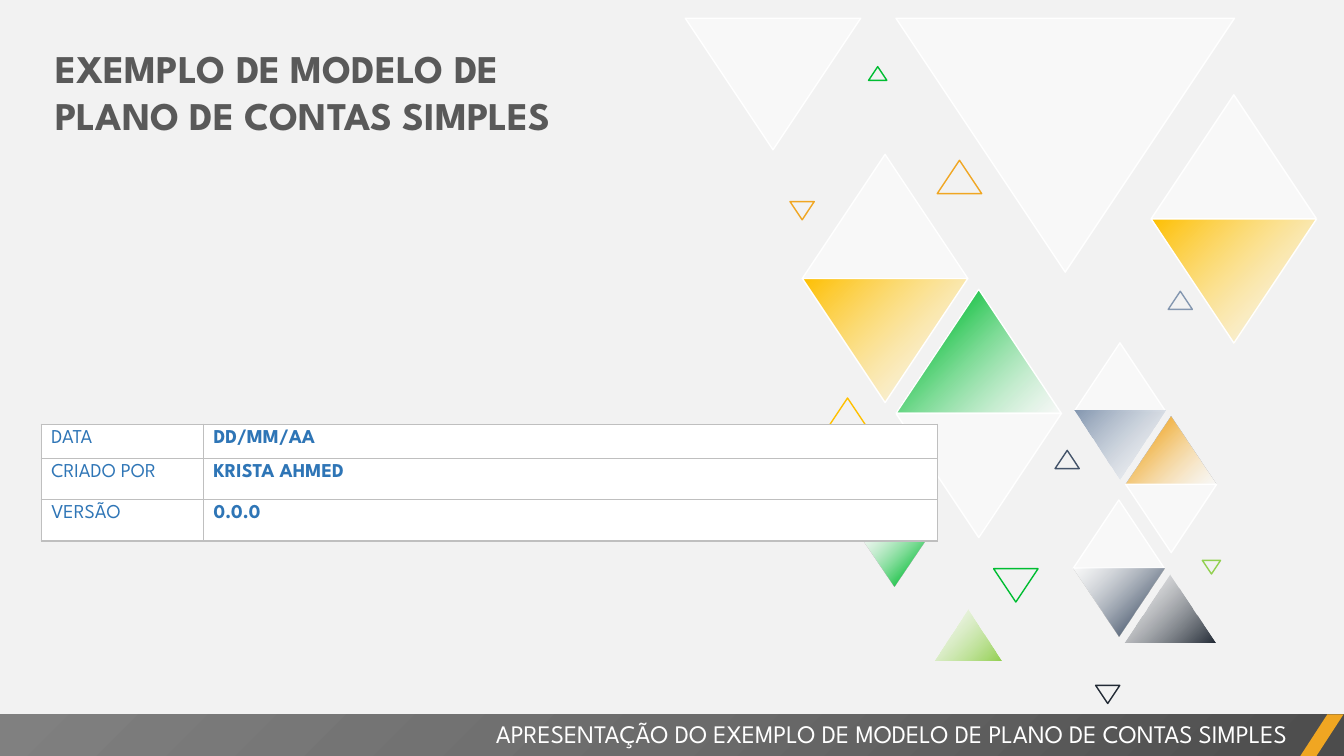
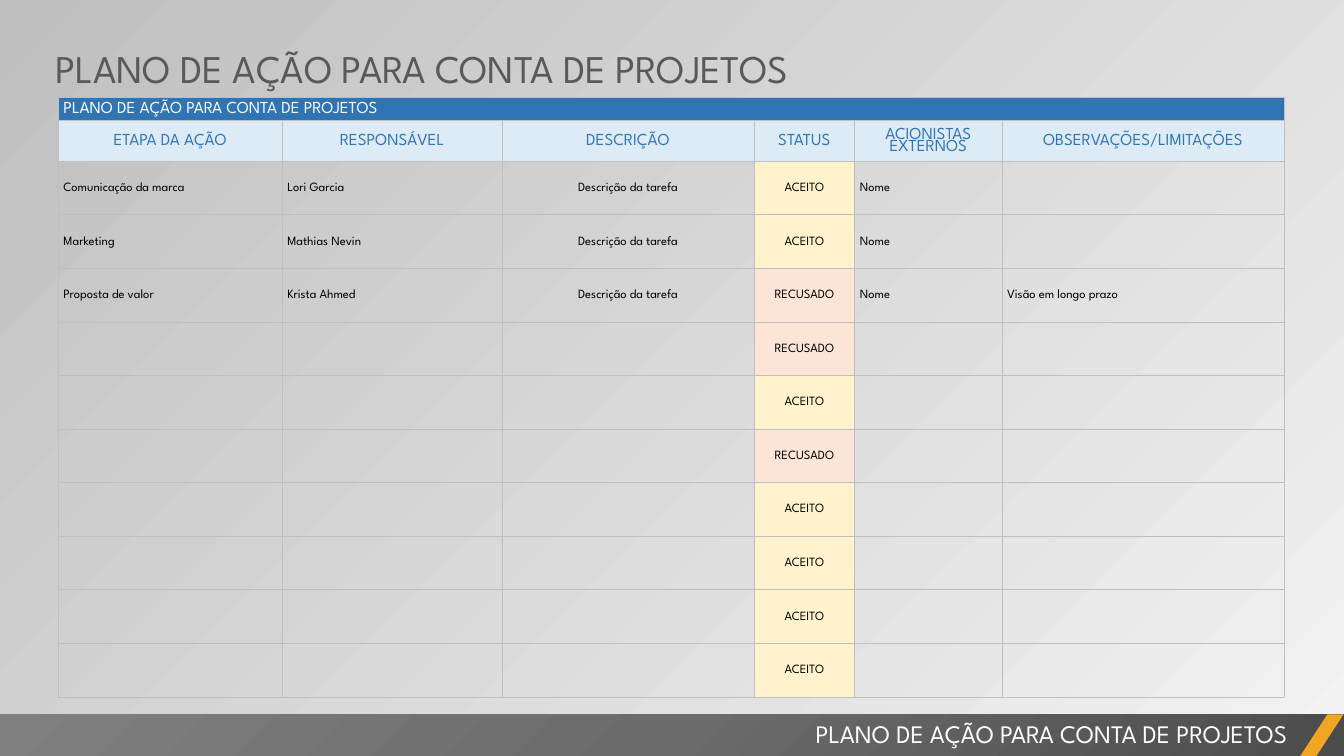
"""Build a two-slide account plan deck: a cover and an action plan."""
from lxml import etree
from pptx import Presentation
from pptx import util as u
from pptx.dml.color import RGBColor
from pptx.enum import shapes, text
from pptx.oxml import ns

HUES = {
    "white": "FFFFFF", "black": "000000", "pale": "F2F2F2", "edge": "BFBFBF",
    "title": "595959", "dark": "4C4C4C", "mid": "6B6B6B", "light": "808080",
    "blue": "2E75B6", "banner": "2F75B5", "sky": "DDEBF7",
    "cream": "FFF2CC", "blush": "FCE4D6",
    "gold": "FFC000", "amber": "F0A622", "green": "00BD32", "lime": "92D050",
    "steel": "8497B0", "slate": "44546A", "ink": "222A35",
}
LEFT, MID, RIGHT = text.PP_ALIGN.LEFT, text.PP_ALIGN.CENTER, text.PP_ALIGN.RIGHT
UP, DOWN = 0, 180
BIG, FAIR, SMALL = 4.17, 2.29, 1.7
WIDE, SLIM, TINY = 1.12, 0.61, 0.46


def place(*sizes):
    return [u.Cm(size) for size in sizes]


def rgb(hue):
    return RGBColor.from_string(HUES[hue])


def sub(parent, tag, **attrs):
    return etree.SubElement(parent, ns.qn(tag), {k: str(v) for k, v in attrs.items()})


def paint(fill, hue):
    fill.solid()
    fill.fore_color.rgb = rgb(hue)


def blend(fill, root, stops, radial=False):
    fill.solid()
    old = root.find(".//" + ns.qn("a:solidFill"))
    grad = etree.Element(ns.qn("a:gradFill"), rotWithShape="1")
    chain = sub(grad, "a:gsLst")
    for pos, hue, alpha in stops:
        stop = sub(chain, "a:gs", pos=pos * 1000)
        tint = sub(stop, "a:srgbClr", val=HUES[hue])
        if alpha < 100:
            sub(tint, "a:alpha", val=alpha * 1000)
    if radial:
        way = sub(grad, "a:path", path="circle")
        sub(way, "a:fillToRect", l=100000, t=100000)
    else:
        sub(grad, "a:lin", ang=225 * 60000, scaled=0)
    old.getparent().replace(old, grad)


class Deck:
    font = "League Spartan"

    def __init__(self):
        self.show = Presentation()
        self.show.slide_width, self.show.slide_height = place(33.87, 19.05)
        self.slide = None

    def start(self):
        self.slide = self.show.slides.add_slide(self.show.slide_layouts[6])

    def put(self, frame, words, size, hue, bold=False, align=LEFT):
        para = frame.paragraphs[0]
        para.alignment = align
        run = para.add_run()
        run.text = words
        run.font.name, run.font.size, run.font.bold = self.font, u.Pt(size), bold
        run.font.color.rgb = rgb(hue)
        return para

    def label(self, box, words, size, hue, **style):
        frame = self.slide.shapes.add_textbox(*place(*box)).text_frame
        frame.word_wrap = True
        frame.auto_size = text.MSO_AUTO_SIZE.SHAPE_TO_FIT_TEXT
        self.put(frame, words, size, hue, **style)

    def title(self, words, width, height, bold=False):
        self.label((1.14, 0.99, width, height), words, 28, "title", bold=bold)

    def shape(self, kind, box, home=None):
        form = (home or self.slide).shapes.add_shape(kind, *place(*box))
        form.shadow.inherit = False
        form.line.fill.background()
        return form

    def footer(self, words, width):
        band = self.shape(shapes.MSO_SHAPE.RECTANGLE, (0, 18, 33.87, 1.05))
        blend(band.fill, band._element.spPr,
              [(0, "dark", 100), (50, "mid", 100), (100, "light", 100)], True)
        slash = self.shape(shapes.MSO_SHAPE.PARALLELOGRAM, (32.77, 18, 1.09, 1.05))
        slash.adjustments[0] = 0.65
        paint(slash.fill, "amber")
        self.label((32.69 - width, 17.98, width, 1.02), words, 18, "white", align=RIGHT)

    def wedge(self, home, left, top, width, turn, hue, mode):
        form = self.shape(shapes.MSO_SHAPE.ISOSCELES_TRIANGLE,
                          (left, top, width, width * 0.75), home)
        form.rotation = turn
        props = form._element.spPr
        if mode == "open":
            form.fill.background()
        elif mode == "glass":
            paint(form.fill, hue)
            sub(props.find(".//" + ns.qn("a:srgbClr")), "a:alpha", val=50000)
        elif mode == "from":
            blend(form.fill, props, [(0, hue, 100), (100, "white", 50)])
        else:
            blend(form.fill, props, [(0, "white", 50), (82, hue, 100)])
        if mode in ("open", "glass") or width >= BIG:
            form.line.color.rgb = rgb(hue if mode == "open" else "white")
            form.line.width = u.Pt(1)

    def grid(self, left, top, cols, rows):
        box = place(left, top, sum(cols), sum(rows))
        table = self.slide.shapes.add_table(len(rows), len(cols), *box).table
        table.first_row = table.horz_banding = False
        for col, width in zip(table.columns, cols):
            col.width = u.Cm(width)
        for row, height in zip(table.rows, rows):
            row.height = u.Cm(height)
        return table

    def cell(self, cell, fill, width):
        if fill:
            paint(cell.fill, fill)
        else:
            cell.fill.background()
        props = cell._tc.get_or_add_tcPr()
        for spot, side in enumerate(("a:lnL", "a:lnR", "a:lnT", "a:lnB")):
            line = sub(props, side, w=u.Pt(width))
            sub(sub(line, "a:solidFill"), "a:srgbClr", val=HUES["edge"])
            props.insert(spot, line)

    def tight(self, cell, words, size, hue, align):
        cell.vertical_anchor = text.MSO_ANCHOR.MIDDLE
        inset = 0.13 if align == LEFT else 0.03
        cell.margin_left, cell.margin_top, cell.margin_right, cell.margin_bottom = \
            place(inset, 0.03, 0.03, 0)
        return self.put(cell.text_frame, words, size, hue, align=align)


GLASS = ("white", "glass")
GEMS = [
    (20.22, 3.89, BIG, GLASS, ("gold", "from")),
    (22.58, 7.29, BIG, ("green", "to"), GLASS),
    (29.01, 2.39, BIG, GLASS, ("gold", "from")),
    (27.08, 8.64, FAIR, GLASS, ("steel", "from")),
    (28.37, 10.49, FAIR, ("amber", "to"), GLASS),
    (27.05, 12.6, FAIR, GLASS, ("slate", "to")),
    (21.69, 12.24, SMALL, GLASS, ("green", "to")),
]
WEDGES = [
    (22.58, 0.46, 8.53, DOWN, *GLASS),
    (17.27, 0.46, 4.42, DOWN, *GLASS),
    (28.35, 14.48, FAIR, UP, "ink", "from"),
    (23.55, 15.37, SMALL, UP, "lime", "from"),
    (25.04, 14.33, WIDE, DOWN, "green", "open"),
    (20.8, 10.03, WIDE, UP, "gold", "open"),
    (23.62, 4.04, WIDE, UP, "amber", "open"),
    (26.59, 11.35, SLIM, UP, "slate", "open"),
    (27.61, 17.27, SLIM, DOWN, "ink", "open"),
    (19.91, 5.08, SLIM, DOWN, "amber", "open"),
    (29.44, 7.34, SLIM, UP, "steel", "open"),
    (21.89, 1.68, TINY, UP, "green", "open"),
    (30.3, 14.12, TINY, DOWN, "lime", "open"),
]
FACTS = [("DATA", "DD/MM/AA"), ("CRIADO POR", "KRISTA AHMED"), ("VERSÃO", "0.0.0")]
PLAN = "PLANO DE AÇÃO PARA CONTA DE PROJETOS"
HEADS = ["ETAPA DA AÇÃO", "RESPONSÁVEL", "DESCRIÇÃO", "STATUS",
         "ACIONISTAS EXTERNOS", "OBSERVAÇÕES/LIMITAÇÕES"]
YES, NO = "ACEITO", "RECUSADO"
TASK = "Descrição da tarefa"
STEPS = [
    ("Comunicação da marca", "Lori Garcia", TASK, YES, "Nome", ""),
    ("Marketing", "Mathias Nevin", TASK, YES, "Nome", ""),
    ("Proposta de valor", "Krista Ahmed", TASK, NO, "Nome", "Visão em longo prazo"),
] + [("", "", "", state, "", "") for state in (NO, YES, NO, YES, YES, YES, YES)]
STATES = {YES: "cream", NO: "blush"}


def cover(deck):
    deck.start()
    paint(deck.slide.background.fill, "pale")
    group = deck.slide.shapes.add_group_shape()
    for left, top, width, upper, lower in GEMS:
        deck.wedge(group, left, top, width, UP, *upper)
        deck.wedge(group, left, top + width * 0.75, width, DOWN, *lower)
    for wedge in WEDGES:
        deck.wedge(group, *wedge)
    deck.title("EXEMPLO DE MODELO DE PLANO DE CONTAS SIMPLES", 14.6, 2.64, bold=True)
    table = deck.grid(1.04, 10.69, [4.09, 18.49], [0.86, 1.04, 1.04])
    for row, fact in enumerate(FACTS):
        for col, words in enumerate(fact):
            cell = table.cell(row, col)
            deck.cell(cell, "white", 1)
            deck.put(cell.text_frame, words, 14, "blue", bold=col == 1)
    deck.footer("APRESENTAÇÃO DO EXEMPLO DE MODELO DE PLANO DE CONTAS SIMPLES", 26.06)


def plan(deck):
    deck.start()
    blend(deck.slide.background.fill, deck.slide._element,
          [(0, "pale", 40), (100, "edge", 100)])
    deck.footer(PLAN, 19.35)
    deck.title(PLAN, 19.94, 1.45)
    table = deck.grid(1.47, 2.44, [5.64, 5.54, 6.35, 2.54, 3.71, 7.11],
                      [0.6, 1.02] + [1.35] * len(STEPS))
    table.cell(0, 0).merge(table.cell(0, len(HEADS) - 1))
    deck.tight(table.cell(0, 0), PLAN, 12, "white", LEFT)
    for col, words in enumerate(HEADS):
        deck.cell(table.cell(0, col), "banner", 0.5)
        deck.cell(table.cell(1, col), "sky", 0.5)
        para = deck.tight(table.cell(1, col), words, 12, "banner", MID)
        para.line_spacing = 0.8
    for row, step in enumerate(STEPS, 2):
        for col, words in enumerate(step):
            cell = table.cell(row, col)
            deck.cell(cell, STATES.get(words), 0.5)
            if words:
                deck.tight(cell, words, 9, "black", MID if col in (2, 3) else LEFT)


def main():
    deck = Deck()
    cover(deck)
    plan(deck)
    deck.show.save("out.pptx")


if __name__ == "__main__":
    main()
